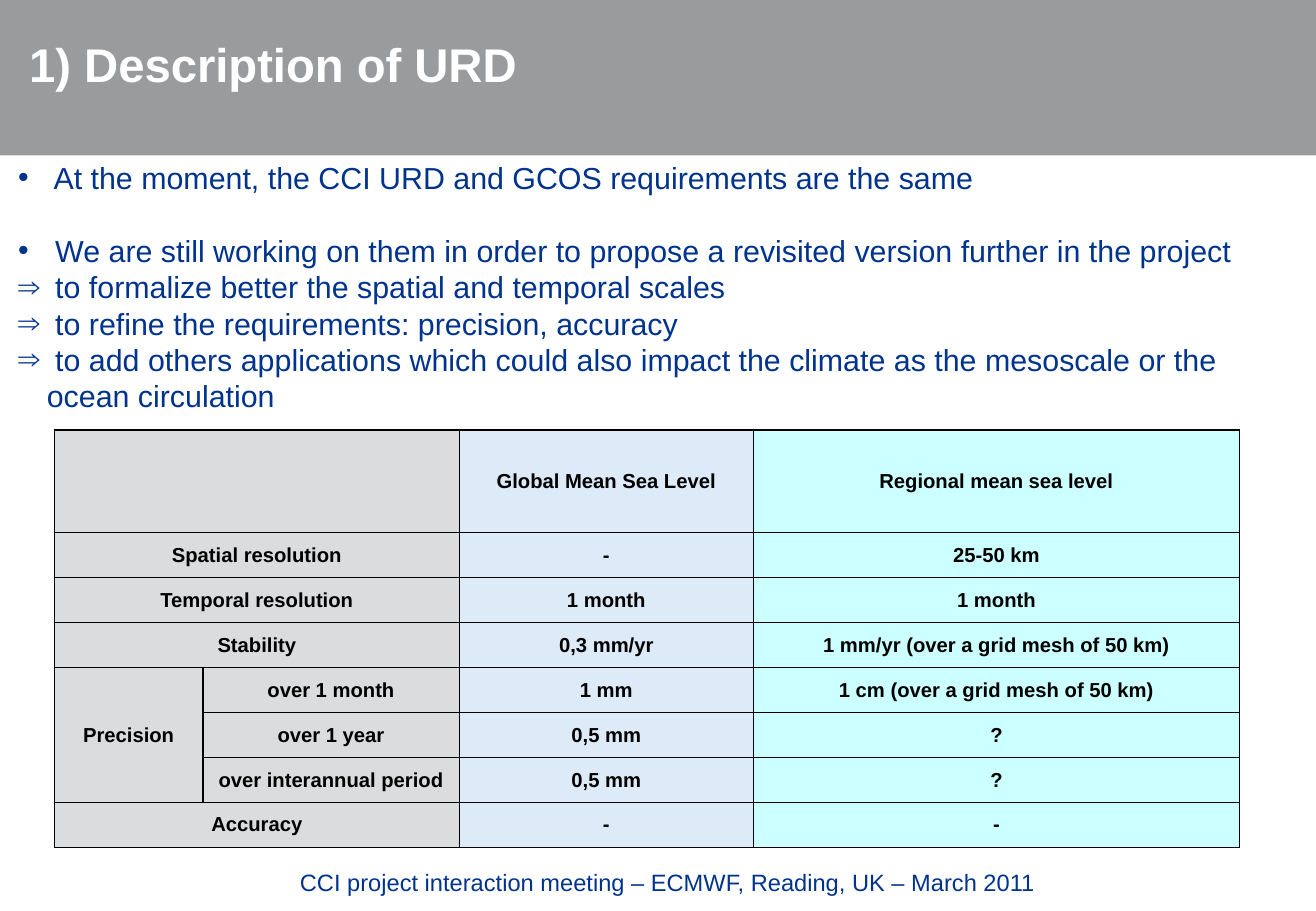
"""Build the slide describing the URD requirements for sea level."""
from lxml import etree
from pptx import Presentation
from pptx.dml.color import RGBColor
from pptx.enum.shapes import MSO_SHAPE
from pptx.enum.text import MSO_ANCHOR, PP_ALIGN
from pptx.oxml.ns import qn
from pptx.util import Cm, Pt

RECTANGLE = MSO_SHAPE.RECTANGLE
MIDDLE = MSO_ANCHOR.MIDDLE
CENTER = PP_ALIGN.CENTER
LEFT = PP_ALIGN.LEFT

FONT = "Arial"
NAVY, WHITE, BLACK, BAND_GRAY = "00338D", "FFFFFF", "000000", "9A9B9C"
COLUMN_FILLS = ["DBDCDD", "DBDCDD", "DDEAF7", "CCFFFF"]

TITLE = "1) Description of URD"
FOOTER = "CCI project interaction meeting – ECMWF, Reading, UK – March 2011"
POINTS = [
    ("•", " At the moment, the CCI URD and GCOS requirements are the same", 0),
    ("•", " We are still working on them in order to propose a revisited version further in the project", 21.6),
    ("⇒", " to formalize better the spatial and temporal scales", 0),
    ("⇒", " to refine the requirements: precision, accuracy", 0),
    ("⇒", " to add others applications which could also impact the climate as the mesoscale or the ocean circulation", 0),
]
REQUIREMENTS = [
    ("", "", "Global Mean Sea Level", "Regional mean sea level"),
    ("Spatial resolution", "", "-", "25-50 km"),
    ("Temporal resolution", "", "1 month", "1 month"),
    ("Stability", "", "0,3 mm/yr", "1 mm/yr (over a grid mesh of 50 km)"),
    ("Precision", "over 1 month", "1 mm", "1 cm (over a grid mesh of 50 km)"),
    ("", "over 1 year", "0,5 mm", "?"),
    ("", "over interannual period", "0,5 mm", "?"),
    ("Accuracy", "", "-", "-"),
]
PRECISION_ROWS = (4, 6)
COLUMN_WIDTHS = [3.1, 5.36, 6.15, 10.16]
HEADER_HEIGHT, ROW_HEIGHT = 2.15, 0.94


def color(hex_code):
    return RGBColor.from_string(hex_code)


def style(paragraph, size, hex_code, bold=False, align=LEFT):
    paragraph.alignment = align
    font = paragraph.font
    font.name, font.size, font.bold = FONT, Pt(size), bold
    font.color.rgb = color(hex_code)


def add_text_frame(slide, left, top, width, height):
    box = slide.shapes.add_textbox(Cm(left), Cm(top), Cm(width), Cm(height))
    box.text_frame.word_wrap = True
    return box.text_frame


def add_bullet(paragraph, mark):
    properties = paragraph._p.get_or_add_pPr()
    properties.set("marL", str(Cm(0.6)))
    properties.set("indent", str(-Cm(0.6)))
    etree.SubElement(properties, qn("a:buFont")).set("typeface", FONT)
    etree.SubElement(properties, qn("a:buChar")).set("char", mark)


def add_borders(cell):
    properties = cell._tc.get_or_add_tcPr()
    for index, side in enumerate(("lnL", "lnR", "lnT", "lnB")):
        line = etree.Element(qn("a:" + side), w=str(Pt(1)))
        fill = etree.SubElement(line, qn("a:solidFill"))
        etree.SubElement(fill, qn("a:srgbClr")).set("val", BLACK)
        properties.insert(index, line)


def add_requirements(slide):
    heights = [HEADER_HEIGHT] + [ROW_HEIGHT] * (len(REQUIREMENTS) - 1)
    table = slide.shapes.add_table(
        len(heights), len(COLUMN_WIDTHS), Cm(1.14), Cm(8.99),
        Cm(sum(COLUMN_WIDTHS)), Cm(sum(heights))).table
    for column, width in zip(table.columns, COLUMN_WIDTHS):
        column.width = Cm(width)
    for row, height in zip(table.rows, heights):
        row.height = Cm(height)
    for row_index, texts in enumerate(REQUIREMENTS):
        for column_index, text in enumerate(texts):
            cell = table.cell(row_index, column_index)
            cell.text = text
            cell.vertical_anchor = MIDDLE
            cell.margin_left = cell.margin_right = Cm(0.18)
            cell.margin_top = cell.margin_bottom = 0
            cell.fill.solid()
            cell.fill.fore_color.rgb = color(COLUMN_FILLS[column_index])
            add_borders(cell)
            style(cell.text_frame.paragraphs[0], 12, BLACK, True, CENTER)
    first, last = PRECISION_ROWS
    table.cell(first, 0).merge(table.cell(last, 0))
    for row_index in range(len(heights)):
        if not first <= row_index <= last:
            table.cell(row_index, 0).merge(table.cell(row_index, 1))


def main():
    deck = Presentation()
    deck.slide_width, deck.slide_height = Cm(27.51), Cm(19.05)
    slide = deck.slides.add_slide(deck.slide_layouts[6])

    band = slide.shapes.add_shape(RECTANGLE, 0, 0, deck.slide_width, Cm(3.25))
    band.shadow.inherit = False
    band.fill.solid()
    band.fill.fore_color.rgb = color(BAND_GRAY)
    band.line.fill.background()

    add_requirements(slide)

    points = add_text_frame(slide, 0.13, 3.2, 26.54, 5.64)
    for index, (mark, text, gap) in enumerate(POINTS):
        point = points.add_paragraph() if index else points.paragraphs[0]
        point.text = text
        point.line_spacing = Pt(21.6)
        if gap:
            point.space_before = Pt(gap)
        add_bullet(point, mark)
        style(point, 18, NAVY)

    title = add_text_frame(slide, 0.36, 0.79, 26.31, 1.96).paragraphs[0]
    title.text = TITLE
    title.line_spacing = 0.85
    style(title, 28, WHITE, True)

    footer = add_text_frame(slide, 6.02, 18.03, 17, 1).paragraphs[0]
    footer.text = FOOTER
    style(footer, 14, NAVY)

    deck.save("out.pptx")


if __name__ == "__main__":
    main()
